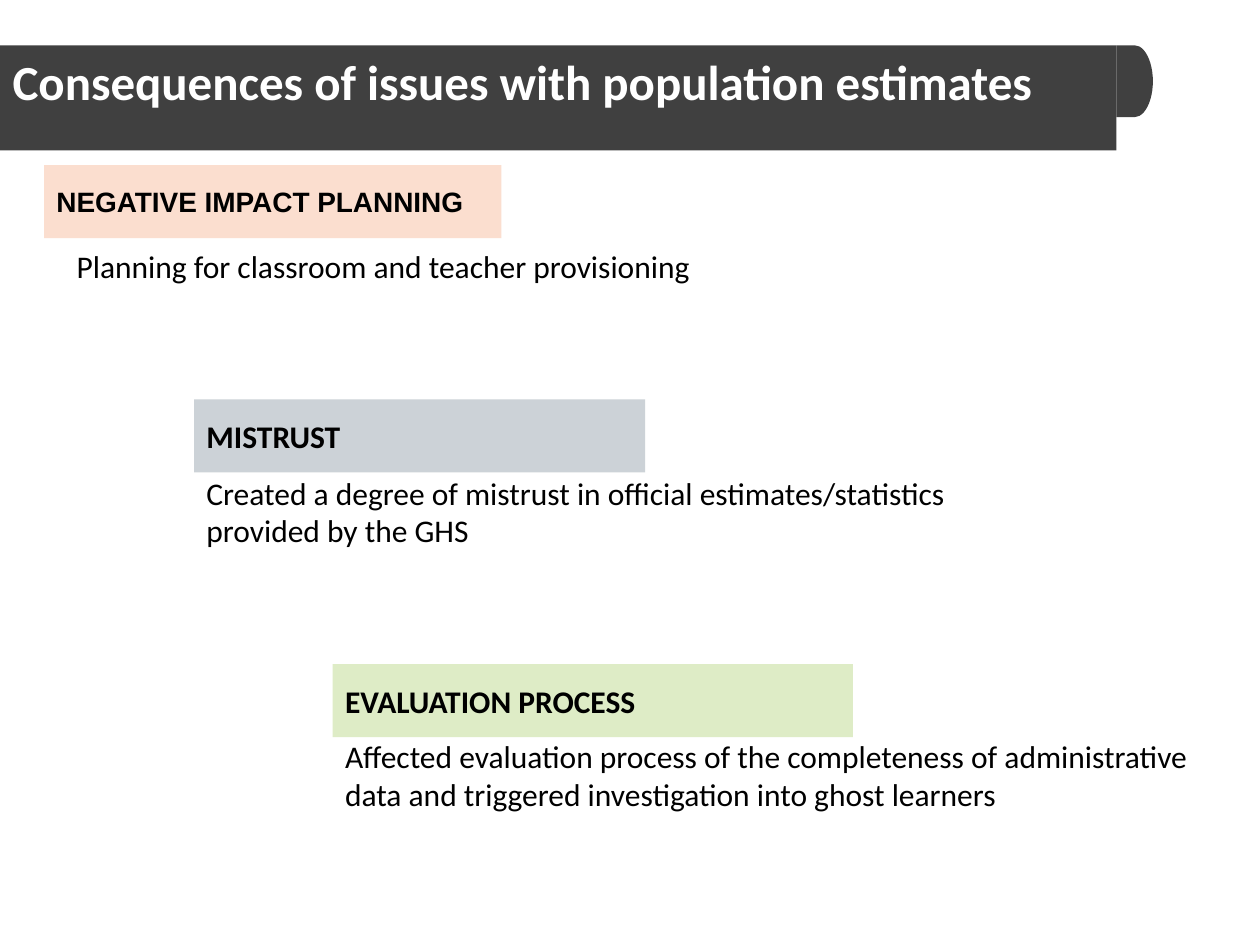
from dataclasses import dataclass

from pptx import Presentation
from pptx import util as u
from pptx.dml.color import RGBColor
from pptx.enum import shapes, text


@dataclass(frozen=True)
class Theme:
    banner: str = "404040"
    light: str = "FFFFFF"
    dark: str = "000000"
    peach: str = "FBDECF"
    grey: str = "CCD2D7"
    green: str = "DEECC6"
    font: str = "Calibri"
    accent_font: str = "Arial"
    title_size: int = 28
    body_size: int = 18
    small_size: int = 16


THEME = Theme()
WIDTH, HEIGHT = 10, 7.5
BANNER_TOP, BANNER_HEIGHT, BANNER_END, CAP_WIDTH = 0.36, 0.57, 8.86, 0.29
LABEL_HEIGHT = 0.58

TITLE = "Consequences of issues with population estimates"
CONSEQUENCES = [
    dict(label="NEGATIVE IMPACT PLANNING",
         detail="Planning for classroom and teacher provisioning",
         left=0.35, top=1.31, label_width=3.63, detail_width=6.14,
         indent=0.16, drop=0.6, detail_height=0.4,
         color=THEME.peach, font=THEME.accent_font, size=THEME.small_size),
    dict(label="MISTRUST",
         detail="Created a degree of mistrust in official estimates/statistics provided by the GHS",
         left=1.54, top=3.17, label_width=3.58, detail_width=6.14,
         indent=0, drop=0.54, detail_height=0.71,
         color=THEME.grey, font=THEME.font, size=THEME.body_size),
    dict(label="EVALUATION PROCESS",
         detail="Affected evaluation process of the completeness of administrative data and triggered investigation into ghost learners",
         left=2.64, top=5.27, label_width=4.13, detail_width=7.17,
         indent=0, drop=0.53, detail_height=0.71,
         color=THEME.green, font=THEME.font, size=THEME.body_size),
]


def box(left, top, width, height):
    return [u.Inches(v) for v in (left, top, width, height)]


def paint(part, color):
    part.fill.solid()
    part.fill.fore_color.rgb = RGBColor.from_string(color)
    part.line.fill.background()


def add_block(slide, kind, place, color):
    block = slide.shapes.add_shape(kind, *box(*place))
    block.shadow.inherit = False
    paint(block, color)
    return block


def write(part, words, font=THEME.font, size=THEME.body_size, color=THEME.dark,
          bold=False, anchor=text.MSO_ANCHOR.TOP, fit=text.MSO_AUTO_SIZE.SHAPE_TO_FIT_TEXT):
    frame = part.text_frame
    frame.word_wrap = True
    frame.auto_size = fit
    frame.vertical_anchor = anchor
    paragraph = frame.paragraphs[0]
    paragraph.alignment = text.PP_ALIGN.LEFT
    run = paragraph.add_run()
    run.text = words
    run.font.name = font
    run.font.size = u.Pt(size)
    run.font.bold = bold
    run.font.color.rgb = RGBColor.from_string(color)


def add_banner(slide):
    title = slide.shapes.title
    title.left, title.top, title.width, title.height = box(
        0, BANNER_TOP, BANNER_END, BANNER_HEIGHT)
    paint(title, THEME.banner)
    write(title, TITLE, size=THEME.title_size, color=THEME.light, bold=True)
    add_block(slide, shapes.MSO_SHAPE.FLOWCHART_DELAY,
              (BANNER_END, BANNER_TOP, CAP_WIDTH, BANNER_HEIGHT), THEME.banner)


def add_consequence(slide, item):
    label = add_block(slide, shapes.MSO_SHAPE.RECTANGLE,
                      (item["left"], item["top"], item["label_width"], LABEL_HEIGHT),
                      item["color"])
    write(label, item["label"], font=item["font"], size=item["size"], bold=True,
          anchor=text.MSO_ANCHOR.MIDDLE, fit=text.MSO_AUTO_SIZE.NONE)
    detail = slide.shapes.add_textbox(*box(
        item["left"] + item["indent"], item["top"] + item["drop"],
        item["detail_width"], item["detail_height"]))
    write(detail, item["detail"])


def main():
    deck = Presentation()
    deck.slide_width, deck.slide_height = u.Inches(WIDTH), u.Inches(HEIGHT)
    slide = deck.slides.add_slide(deck.slide_layouts.get_by_name("Title Only"))
    add_banner(slide)
    for item in CONSEQUENCES:
        add_consequence(slide, item)
    deck.save("out.pptx")


if __name__ == "__main__":
    main()
